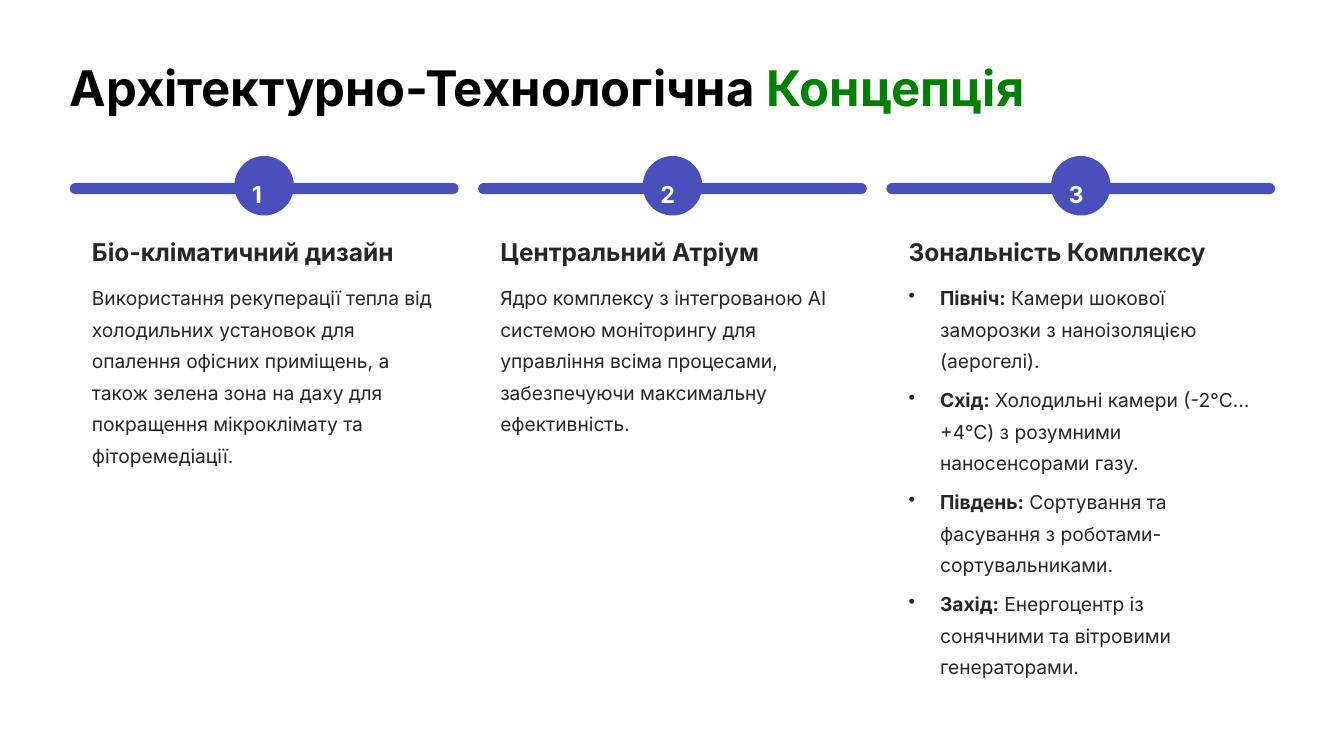
"""Build the slide with three numbered columns of the building concept."""
from lxml.etree import SubElement
from pptx import Presentation
from pptx.dml.color import RGBColor
from pptx.enum.shapes import MSO_SHAPE as Shape
from pptx.oxml.ns import qn
from pptx.util import Pt

BLACK = RGBColor(0x00, 0x00, 0x00)
GREEN = RGBColor(0x00, 0x80, 0x00)
BLUE = RGBColor(0x49, 0x50, 0xBC)
WHITE = RGBColor(0xFF, 0xFF, 0xFF)
GRAY = RGBColor(0x27, 0x25, 0x25)

LEFT, STEP, WIDE = 59.8, 350, 333.2
DOT = 51

deck = Presentation()
deck.slide_width, deck.slide_height = Pt(1152), Pt(648)
slide = deck.slides.add_slide(deck.slide_layouts[6])


def write(paras, box, size, lead, color=GRAY, bold=False, list_gap=None):
    """Add a text box; each paragraph is a list of (text, extra format) runs."""
    frame = slide.shapes.add_textbox(*map(Pt, box)).text_frame
    frame.word_wrap = True
    frame.margin_left = frame.margin_right = 0
    frame.margin_top = frame.margin_bottom = 0
    for n, runs in enumerate(paras):
        para = frame.add_paragraph() if n else frame.paragraphs[0]
        if list_gap is not None:
            props = para._p.get_or_add_pPr()
            props.set("marL", str(Pt(27)))
            props.set("indent", str(-Pt(27)))
            SubElement(props, qn("a:buChar")).set("char", "•")
            if n:
                para.space_before = Pt(list_gap)
        para.line_spacing = Pt(lead)
        for text, extra in runs:
            run = para.add_run()
            run.text = text
            font = run.font
            font.name, font.size = "Inter", Pt(size)
            font.bold = extra.get("bold", bold)
            font.color.rgb = extra.get("color", color)


def draw(kind, box):
    """Add a plain blue shape."""
    shape = slide.shapes.add_shape(kind, *map(Pt, box))
    shape.shadow.inherit = False
    shape.fill.solid()
    shape.fill.fore_color.rgb = BLUE
    shape.line.fill.background()
    return shape


write([[("Архітектурно-Технологічна ", {}), ("Концепція", {"color": GREEN})]],
      (LEFT, 46.8, 900, 53), 42, 53, color=BLACK, bold=True)

zones = [
    ("Північ:", " Камери шокової заморозки з наноізоляцією (аерогелі)."),
    ("Схід:", " Холодильні камери (-2°C…+4°C) з розумними наносенсорами газу."),
    ("Південь:", " Сортування та фасування з роботами-сортувальниками."),
    ("Захід:", " Енергоцентр із сонячними та вітровими генераторами."),
]
columns = [
    ("Біо-кліматичний дизайн", 163, None, [[(
        "Використання рекуперації тепла від холодильних установок для "
        "опалення офісних приміщень, а також зелена зона на даху для "
        "покращення мікроклімату та фіторемедіації.", {})]]),
    ("Центральний Атріум", 136, None, [[(
        "Ядро комплексу з інтегрованою AI системою моніторингу для "
        "управління всіма процесами, забезпечуючи максимальну "
        "ефективність.", {})]]),
    ("Зональність Комплексу", 343.5, 6.4,
     [[(name, {"bold": True}), (text, {})] for name, text in zones]),
]

for n, (head, tall, gap, body) in enumerate(columns):
    x = LEFT + n * STEP
    bar = draw(Shape.ROUNDED_RECTANGLE, (x, 156.8, WIDE, 9.6))
    bar.adjustments[0] = 0.5
    draw(Shape.OVAL, (x + (WIDE - DOT) / 2, 133.7, DOT, DOT))
    write([[(str(n + 1), {})]], (x + 156.2, 146.2, 20, 25), 20, 32.5,
          color=WHITE, bold=True)
    write([[(head, {})]], (x + 19, 201.6, 294.5, 26.5), 21, 26.5, bold=True)
    write(body, (x + 19, 238.3, 294.5, tall), 16.5, 27, list_gap=gap)

deck.save("out.pptx")
